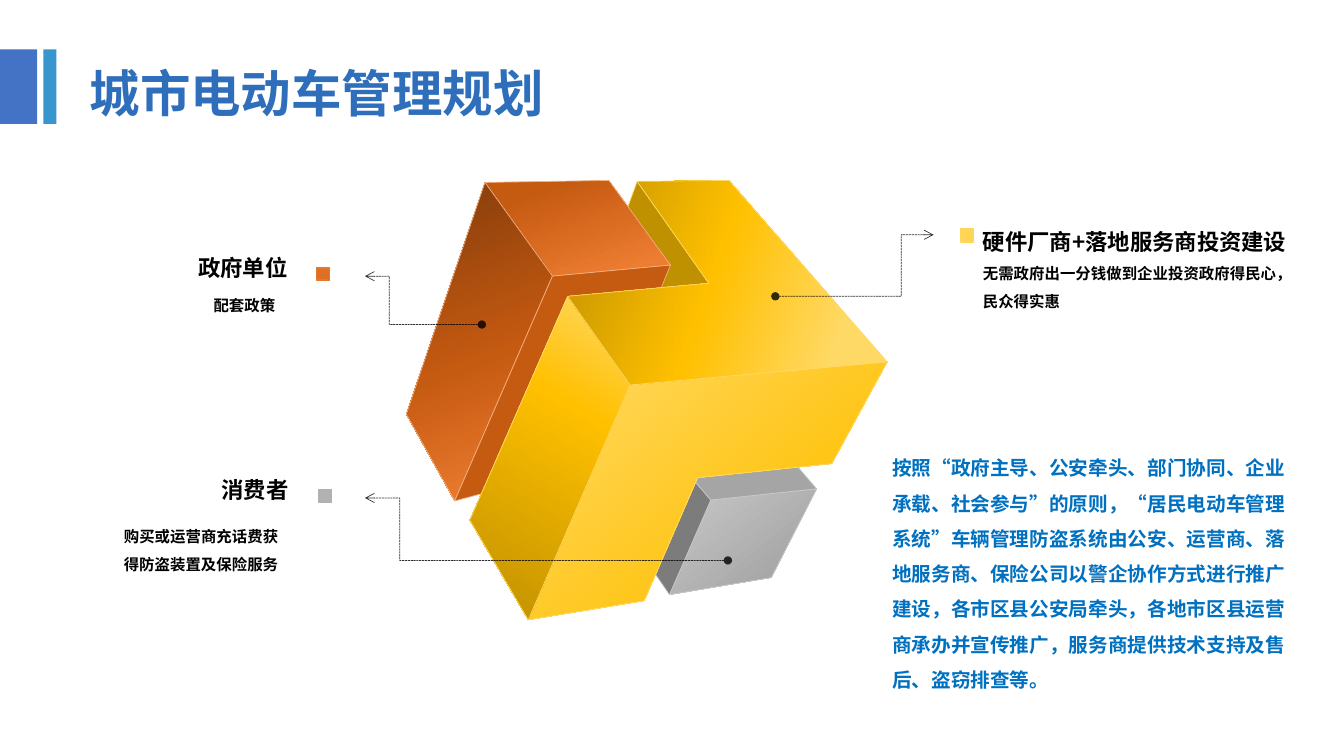
from lxml.etree import SubElement as Sub
from pptx import Presentation
from pptx.dml.color import RGBColor as RGB
from pptx.enum.shapes import MSO_CONNECTOR as Conn, MSO_SHAPE as Form
from pptx.enum.text import MSO_ANCHOR as Anchor, MSO_AUTO_SIZE as Auto, PP_ALIGN as Align
from pptx.oxml.ns import qn
from pptx.util import Inches, Pt

HUE = {
    "black": "000000", "title": "2E6EBB", "body": "0070C0",
    "bar": "4472C4", "strip": "3796CD",
    "silver": "C9C9C9", "grey": "A5A5A5", "slate": "7C7C7C",
    "peach": "F4B183", "orange": "ED7D31", "rust": "C55A11", "brown": "843C0B",
    "cream": "FFD966", "gold": "FFC000", "olive": "BF9000",
    "key_gold": "FFD555", "edge_gold": "FFD659",
    "key_grey": "B2B2B2", "edge_grey": "B1B1B1",
    "key_rust": "DE7025", "edge_rust": "E6772B",
}
SANS = "Noto Sans CJK SC"

TITLE = "城市电动车管理规划"
TEXTS = [
    ((1.15, 2.47, 1.8, 0.37), Align.RIGHT, None, "black", [("政府单位", 16)]),
    ((1.1, 2.89, 1.73, 0.28), Align.RIGHT, Pt(13), "black", [("配套政策", 11)]),
    ((1.16, 4.67, 1.8, 0.37), Align.RIGHT, None, "black", [("消费者", 16)]),
    ((1.13, 5.09, 1.73, 0.65), Align.RIGHT, 1.5, "black",
     [("购买或运营商充话费获得防盗装置及保险服务", 11)]),
    ((9.65, 2.08, 3.4, 1.06), Align.LEFT, 1.5, "black",
     [("硬件厂商+落地服务商投资建设", 16),
      ("无需政府出一分钱做到企业投资政府得民心，民众得实惠", 11)]),
    ((8.75, 4.36, 4.19, 2.57), Align.LEFT, 1.5, "body",
     [("按照“政府主导、公安牵头、部门协同、企业承载、社会参与”的原则，"
       "“居民电动车管理系统”车辆管理防盗系统由公安、运营商、落地服务商、"
       "保险公司以警企协作方式进行推广建设，各市区县公安局牵头，"
       "各地市区县运营商承办并宣传推广，服务商提供技术支持及售后、盗窃排查等。", 14)]),
]
BARS = [((0.43, 0.49, 0.13, 0.74), "strip", None), ((0, 0.49, 0.37, 0.74), "bar", None)]
KEYS = [
    ((9.53, 2.27, 0.12, 0.13), "key_gold", "edge_gold"),
    ((3.16, 4.86, 0.13, 0.12), "key_grey", "edge_grey"),
    ((3.14, 2.66, 0.13, 0.12), "key_rust", "edge_rust"),
]
POINTS = {
    "a": (8.1, 4.85), "b": (7.05, 4.96), "c": (6.64, 5.9), "d": (7.65, 5.73),
    "e": (6.33, 5.45), "f": (6.68, 4.53), "g": (7.73, 4.42),
    "h": (6.32, 1.8), "i": (7.03, 2.81), "j": (6.56, 3.72), "k": (5.79, 3.24),
    "l": (5.48, 2.74), "m": (6.65, 2.63), "n": (6.04, 1.79), "o": (4.81, 1.81),
    "p": (4.03, 4.11), "q": (4.51, 4.97), "r": (5.85, 4.61),
    "s": (8.8, 3.59), "t": (6.25, 3.82), "u": (5.24, 6.15), "v": (6.39, 5.96),
    "w": (6.92, 4.74), "x": (8.25, 4.6), "y": (5.63, 2.94), "z": (4.66, 5.16),
    "A": (7.23, 1.79),
}
FACES = [
    ("abcd", "silver", 50, [(0, "silver"), (81, "grey")]),
    ("bcef", "silver", 0, "slate"),
    ("fgab", "silver", 0, "grey"),
    ("hijk", "cream", 0, "olive"),
    ("lmno", "peach", 70, [(18, "rust"), (88, "orange")]),
    ("opql", "peach", 70, [(0, "brown"), (55, "rust"), (95, "orange")]),
    ("mlqr", "peach", 0, "rust"),
    ("stuvwx", "cream", 50, [(0, "cream"), (80, "gold")]),
    ("yzut", "cream", 120, [(0, "cream"), (34, "gold"), (100, "olive")]),
    ("tsAhiy", "cream", 200, [(16, "cream"), (54, "gold"), (100, "olive")]),
]
LINKS = [
    ((4.78, 3.22, 3.62, 2.74), 79.2),
    ((7.22, 5.56, 3.62, 4.94), 90.4),
    ((7.69, 2.94, 9.26, 2.33), 79.5),
]


def tint(name):
    return RGB.from_string(HUE[name])


def size(nums):
    return [Inches(n) for n in nums]


def style(item, form):
    for key, val in form.items():
        setattr(item, key, val)


def paint(shape, fill, edge, width, angle=0):
    shape.shadow.inherit = False
    if isinstance(fill, str):
        shape.fill.solid()
        shape.fill.fore_color.rgb = tint(fill)
    else:
        shape.fill.gradient()
        shape.fill.gradient_angle = (360 - angle) % 360
        stops = shape._element.spPr.find(qn("a:gradFill")).find(qn("a:gsLst"))
        for old in list(stops):
            stops.remove(old)
        for pos, name in fill:
            stop = Sub(stops, qn("a:gs"), pos=str(pos * 1000))
            Sub(stop, qn("a:srgbClr"), val=HUE[name])
    if edge:
        shape.line.color.rgb = tint(edge)
        shape.line.width = Pt(width)
    else:
        shape.line.fill.background()


def write(shape, box, lines, face, hue, align, gap):
    style(shape, dict(zip(("left", "top", "width", "height"), size(box))))
    frame = shape.text_frame
    style(frame, {"word_wrap": True, "auto_size": Auto.SHAPE_TO_FIT_TEXT,
                  "vertical_anchor": Anchor.TOP})
    for i, (text, pts) in enumerate(lines):
        para = frame.add_paragraph() if i else frame.paragraphs[0]
        style(para, {"alignment": align, "line_spacing": gap})
        run = para.add_run()
        run.text = text
        style(run.font, {"size": Pt(pts), "bold": True, "name": face})
        run.font.color.rgb = tint(hue)
        Sub(run._r.get_or_add_rPr(), qn("a:ea"), typeface=SANS)


def block(box, fill, edge):
    paint(shapes.add_shape(Form.RECTANGLE, *size(box)), fill, edge, 1)


def facet(names, edge, angle, fill):
    first, *rest = [size(POINTS[n]) for n in names]
    form = shapes.build_freeform(*first, scale=1.0)
    form.add_line_segments(rest, close=True)
    paint(form.convert_to_shape(), fill, edge, 0.5, angle)


def link(ends, bend):
    wire = shapes.add_connector(Conn.ELBOW, *size(ends))
    wire.line.color.rgb = tint("black")
    wire.line.width = Pt(0.5)
    props = wire._element.spPr
    geom = props.find(qn("a:prstGeom"))
    guides = geom.find(qn("a:avLst"))
    if guides is None:
        guides = Sub(geom, qn("a:avLst"))
    Sub(guides, qn("a:gd"), name="adj1", fmla=f"val {round(bend * 1000)}")
    line = props.find(qn("a:ln"))
    Sub(next(line.iter(qn("a:srgbClr"))), qn("a:alpha"), val="80000")
    for tag, key, val in (("prstDash", "val", "sysDash"),
                          ("headEnd", "type", "oval"), ("tailEnd", "type", "arrow")):
        Sub(line, qn("a:" + tag)).set(key, val)
    Sub(props, qn("a:effectLst"))


deck = Presentation()
style(deck, {"slide_width": Inches(13.33), "slide_height": Inches(7.5)})
shapes = deck.slides.add_slide(deck.slide_layouts[5]).shapes

write(shapes.title, (0.79, 0.57, 5.07, 0.7), [(TITLE, 36)], "Arial", "title",
      Align.JUSTIFY, None)
for bar in BARS:
    block(*bar)
for face in FACES:
    facet(*face)
for ends, bend in LINKS:
    link(ends, bend)
for key in KEYS:
    block(*key)
for box, align, gap, hue, lines in TEXTS:
    write(shapes.add_textbox(*size(box)), box, lines, SANS, hue, align, gap)

deck.save("out.pptx")
